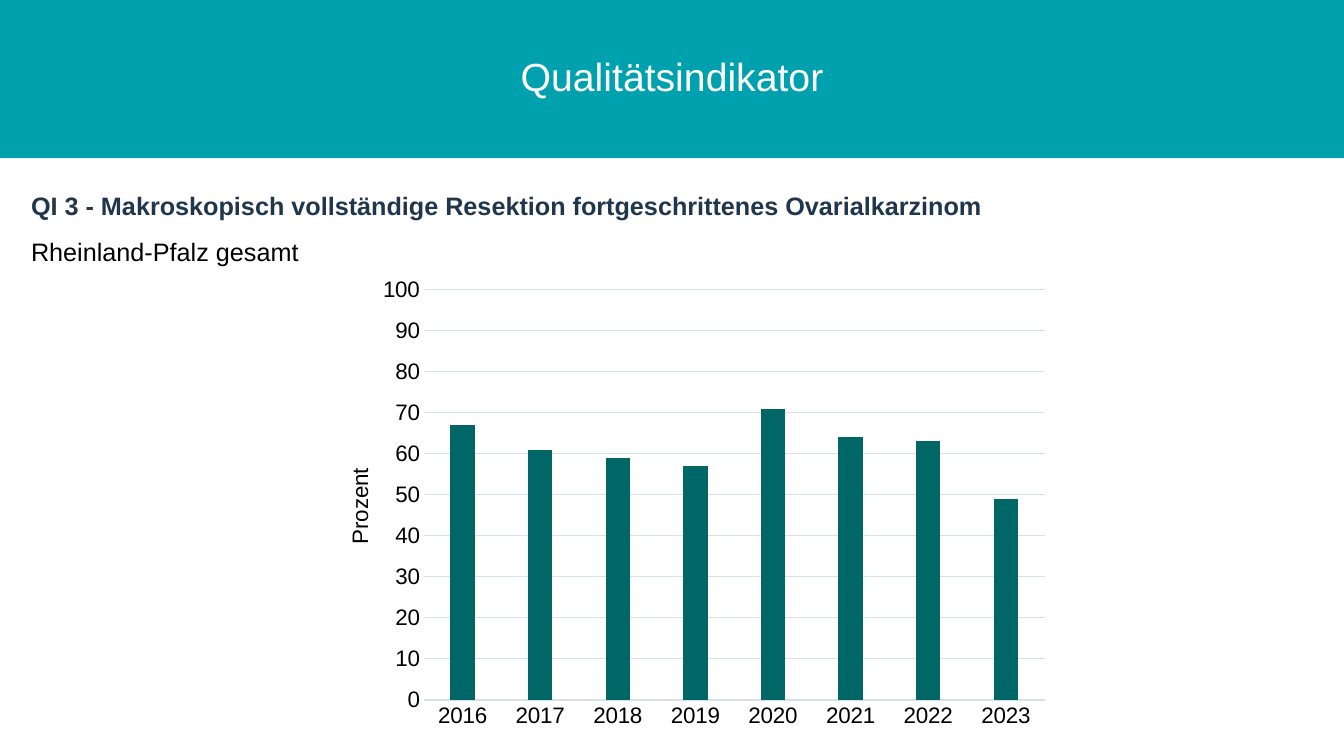
"""Build the quality indicator slide with its yearly column chart."""
from dataclasses import dataclass

from lxml import etree
from pptx import Presentation
from pptx.chart.data import CategoryChartData
from pptx.dml.color import RGBColor as RGB
from pptx.enum.chart import XL_CHART_TYPE as ChartType, XL_TICK_MARK as Tick
from pptx.enum.text import MSO_ANCHOR as Anchor, MSO_AUTO_SIZE as AutoSize, PP_ALIGN as Align
from pptx.oxml.ns import qn
from pptx.util import Inches, Pt


@dataclass(frozen=True)
class Theme:
    font: str = "Arial"
    banner: RGB = RGB(0x00, 0xA1, 0xAF)
    white: RGB = RGB(0xFF, 0xFF, 0xFF)
    heading: RGB = RGB(0x20, 0x36, 0x4C)
    text: RGB = RGB(0x00, 0x00, 0x00)
    grid: RGB = RGB(0xD5, 0xE1, 0xED)
    bar: RGB = RGB(0x00, 0x66, 0x66)
    title_size: int = 28
    body_size: int = 18
    chart_size: int = 16


class SlideBuilder:
    def __init__(self, prs, theme):
        self.theme = theme
        self.s = prs.slides.add_slide(prs.slide_layouts[5])

    def style(self, font, size, color, bold=False):
        font.name = self.theme.font
        font.size = Pt(size)
        font.bold = bold
        font.color.rgb = color

    def run(self, p, text, size, color, bold=False):
        r = p.add_run()
        r.text = text
        self.style(r.font, size, color, bold)

    def place(self, sp, box):
        sp.left, sp.top, sp.width, sp.height = map(Inches, box)

    def title(self, text, box):
        sp = self.s.shapes.title
        self.place(sp, box)
        sp.fill.solid()
        sp.fill.fore_color.rgb = self.theme.banner
        tf = sp.text_frame
        tf.auto_size = AutoSize.NONE
        tf.vertical_anchor = Anchor.MIDDLE
        p = tf.paragraphs[0]
        p.alignment = Align.CENTER
        p.line_spacing = 0.9
        self.run(p, text, self.theme.title_size, self.theme.white)

    def text(self, lines, box):
        tf = self.s.shapes.add_textbox(*map(Inches, box)).text_frame
        tf.word_wrap = True
        for i, (text, color, bold) in enumerate(lines):
            p = tf.add_paragraph() if i else tf.paragraphs[0]
            p.line_spacing = 1.5
            self.run(p, text, self.theme.body_size, color, bold)

    def layout(self, parent, **values):
        node = parent.find(qn("c:layout"))
        if node is None:
            node = etree.Element(qn("c:layout"))
            parent.insert(0, node)
        manual = etree.SubElement(node, qn("c:manualLayout"))
        for tag, val in values.items():
            etree.SubElement(manual, qn(f"c:{tag}")).set("val", str(val))

    def axis_line(self, line):
        line.color.rgb = self.theme.grid
        line.width = Pt(0.75)

    def column_chart(self, values, axis_label, box):
        t = self.theme
        data = CategoryChartData()
        data.categories = list(values)
        data.add_series("Series 1", values.values())
        chart = self.s.shapes.add_chart(
            ChartType.COLUMN_CLUSTERED, *map(Inches, box), data).chart
        chart.has_legend = chart.has_title = False
        self.style(chart.font, t.chart_size, t.text)

        plot = chart.plots[0]
        plot.vary_by_categories = False
        plot.gap_width = 219
        plot.overlap = -27
        fill = plot.series[0].format.fill
        fill.solid()
        fill.fore_color.rgb = t.bar

        cat, val = chart.category_axis, chart.value_axis
        for axis in (cat, val):
            axis.major_tick_mark = axis.minor_tick_mark = Tick.NONE
            self.style(axis.tick_labels.font, t.chart_size, t.text)
        self.axis_line(cat.format.line)
        self.axis_line(val.major_gridlines.format.line)
        val.format.line.fill.background()
        val.minimum_scale, val.maximum_scale, val.major_unit = 0, 100, 10

        label = val.axis_title
        self.run(label.text_frame.paragraphs[0], axis_label, t.chart_size, t.text)
        title = label._element
        body = title.find(".//" + qn("a:bodyPr"))
        body.set("rot", "-5400000")
        body.set("vert", "horz")
        self.layout(title, xMode="edge", yMode="edge", x=0.04, y=0.42)
        area = chart._chartSpace.find(".//" + qn("c:plotArea"))
        self.layout(area, layoutTarget="inner", xMode="edge", yMode="edge",
                    x=0.15, y=0.05, w=0.83, h=0.87)


def main():
    prs = Presentation()
    prs.slide_width, prs.slide_height = Inches(13.33), Inches(7.5)
    theme = Theme()
    slide = SlideBuilder(prs, theme)
    slide.title("Qualitätsindikator", (0, 0, 13.33, 1.57))
    slide.text([
        ("QI 3 - Makroskopisch vollständige Resektion fortgeschrittenes Ovarialkarzinom",
         theme.heading, True),
        ("Rheinland-Pfalz gesamt", theme.text, False),
    ], (0.21, 1.69, 9.96, 0.95))
    rates = (67, 61, 59, 57, 71, 64, 63, 49)
    by_year = {str(year): rate for year, rate in enumerate(rates, 2016)}
    slide.column_chart(by_year, "Prozent", (3.09, 2.64, 7.42, 4.68))
    prs.save("out.pptx")


if __name__ == "__main__":
    main()
